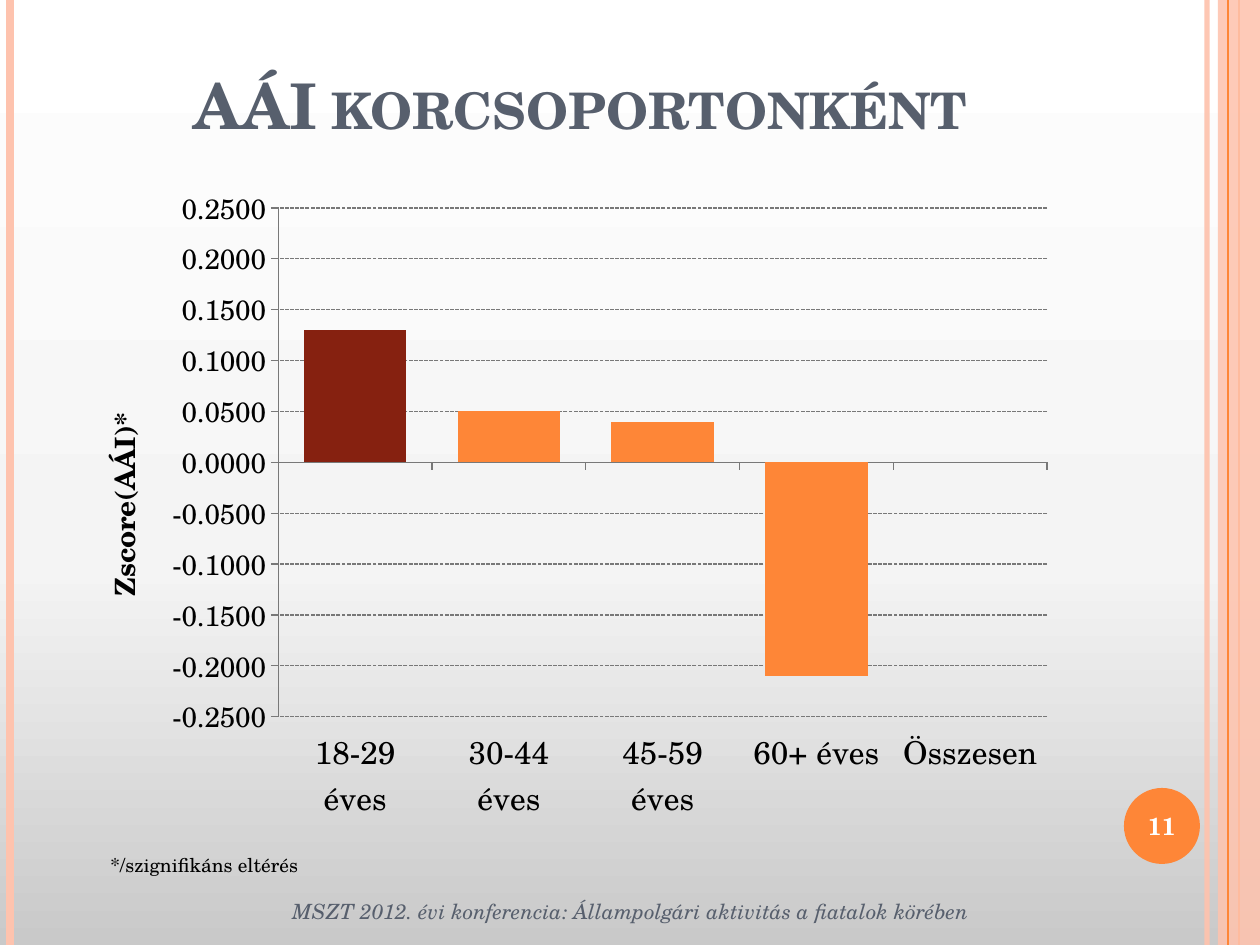
from dataclasses import dataclass
from typing import Optional

from lxml.etree import SubElement
from pptx import Presentation
from pptx.chart.data import CategoryChartData
from pptx.dml.color import RGBColor
from pptx.enum.chart import XL_CHART_TYPE, XL_TICK_LABEL_POSITION, XL_TICK_MARK
from pptx.enum.dml import MSO_LINE
from pptx.enum.shapes import MSO_CONNECTOR, MSO_SHAPE
from pptx.enum.text import MSO_ANCHOR, PP_ALIGN
from pptx.oxml import parse_xml
from pptx.oxml.ns import nsdecls, qn
from pptx.util import Emu, Pt

PX = 914400 / 126
W, H = 1260, 945
FONT = "TeX Gyre Schola"
ORANGE = RGBColor(0xFE, 0x86, 0x37)
PEACH = RGBColor(0xFE, 0xC3, 0xAE)
BROWN = RGBColor(0x86, 0x21, 0x10)
SLATE = RGBColor(0x57, 0x5F, 0x6D)
GREY = RGBColor(0x78, 0x78, 0x78)
WHITE = RGBColor(0xFF, 0xFF, 0xFF)
BLACK = RGBColor(0, 0, 0)
BG_STOPS = ((0, "C9C9C9"), (40, "F4F4F4"), (100, "FFFFFF"))


@dataclass
class Stripe:
    """A vertical line over the full slide height."""
    x: int
    width: float
    color: RGBColor
    alpha: Optional[int] = None


@dataclass
class Label:
    """A one-line text with its box in px and its font values."""
    text: str
    box: tuple
    font: dict
    align: PP_ALIGN = PP_ALIGN.CENTER
    anchor: MSO_ANCHOR = MSO_ANCHOR.MIDDLE
    wrap: bool = True


STRIPES = (
    Stripe(1207, 3, PEACH, 93),
    Stripe(10, 4.5, PEACH),
    Stripe(1239, 1.5, ORANGE),
)
EDGE = Stripe(1228, 0.75, ORANGE)
TITLE = Label("AÁI korcsoportonként", (108, 48, 945, 100),
              dict(size=Pt(36), bold=True, color=SLATE), anchor=MSO_ANCHOR.BOTTOM)
LABELS = (
    Label("11", (1120, 790, 84, 72), dict(size=Pt(14), bold=True, color=WHITE)),
    Label("MSZT 2012. évi konferencia: Állampolgári aktivitás a fiatalok körében",
          (168, 887, 925, 49), dict(size=Pt(12), italic=True, color=SLATE)),
    Label("*/szignifikáns eltérés", (98, 847, 215, 36), dict(size=Pt(11), color=BLACK),
          PP_ALIGN.LEFT, MSO_ANCHOR.TOP, False),
)
CHART_BOX = (74, 175, 992, 660)
AGES = {"18-29 éves": 0.13, "30-44 éves": 0.05, "45-59 éves": 0.04,
        "60+ éves": -0.21, "Összesen": None}


def emu(*px: int) -> list:
    """Turn px lengths into EMU."""
    return [Emu(round(v * PX)) for v in px]


def set_values(obj, values: dict) -> None:
    """Set attributes from a dict of format values."""
    for name, value in values.items():
        setattr(obj, name, value)


def set_font(font, values: dict) -> None:
    """Apply the slide's font with the given values."""
    font.color.rgb = values["color"]
    set_values(font, {"name": FONT, **{k: v for k, v in values.items() if k != "color"}})


def set_alpha(shape, percent: int) -> None:
    """Make the first solid colour of a shape transparent."""
    clr = next(shape._element.spPr.iter(qn("a:srgbClr")))
    SubElement(clr, qn("a:alpha")).set("val", str(percent * 1000))


def add_stripe(s, stripe: Stripe) -> None:
    """Draw one vertical stripe."""
    line = s.shapes.add_connector(MSO_CONNECTOR.STRAIGHT, *emu(stripe.x, 0, stripe.x, H))
    line.line.width = Pt(stripe.width)
    line.line.color.rgb = stripe.color
    if stripe.alpha:
        set_alpha(line, stripe.alpha)
    SubElement(line._element.spPr, qn("a:effectLst"))


def add_block(s, kind: MSO_SHAPE, box: tuple, color: RGBColor):
    """Draw a flat filled shape."""
    sp = s.shapes.add_shape(kind, *emu(*box))
    sp.shadow.inherit = False
    sp.fill.solid()
    sp.fill.fore_color.rgb = color
    sp.line.fill.background()
    return sp


def write_label(sp, label: Label) -> None:
    """Place a text shape and fill it with its label."""
    set_values(sp, dict(zip(("left", "top", "width", "height"), emu(*label.box))))
    tf = sp.text_frame
    set_values(tf, dict(word_wrap=label.wrap, vertical_anchor=label.anchor))
    p = tf.paragraphs[0]
    p.alignment = label.align
    r = p.add_run()
    r.text = label.text
    set_font(r.font, label.font)


def set_background(s) -> None:
    """Fill the background with a gradient from bottom to top."""
    fill = s.background.fill
    fill.gradient()
    fill.gradient_angle = 90
    stops = next(s._element.iter(qn("a:gsLst")))
    for old in list(stops):
        stops.remove(old)
    for pos, color in BG_STOPS:
        gs = SubElement(stops, qn("a:gs"), pos=str(pos * 1000))
        SubElement(gs, qn("a:srgbClr"), val=color)


def manual_layout(**values) -> object:
    """Build a manual chart layout."""
    items = "".join(f'<c:{k} val="{v}"/>' for k, v in values.items())
    return parse_xml(f'<c:layout {nsdecls("c")}><c:manualLayout>{items}'
                     '</c:manualLayout></c:layout>')


def add_age_chart(s) -> None:
    """Draw the column chart of scores by age group."""
    data = CategoryChartData(number_format="0.00")
    data.categories = list(AGES)
    data.add_series("Series 1", list(AGES.values()))
    chart = s.shapes.add_chart(XL_CHART_TYPE.COLUMN_CLUSTERED, *emu(*CHART_BOX), data).chart
    set_values(chart, dict(has_legend=False, has_title=False))
    set_font(chart.font, dict(size=Pt(10), color=BLACK))

    plot = chart.plots[0]
    set_values(plot, dict(gap_width=50, vary_by_categories=False))
    series = plot.series[0]
    series.invert_if_negative = False
    for fmt, color in ((series.format, ORANGE), (series.points[0].format, BROWN)):
        fmt.fill.solid()
        fmt.fill.fore_color.rgb = color

    cat, val = chart.category_axis, chart.value_axis
    for axis, size in ((cat, 18), (val, 16)):
        set_values(axis, dict(major_tick_mark=XL_TICK_MARK.OUTSIDE,
                              minor_tick_mark=XL_TICK_MARK.NONE))
        axis.format.line.color.rgb = GREY
        set_font(axis.tick_labels.font, dict(size=Pt(size), color=BLACK))
    cat.tick_label_position = XL_TICK_LABEL_POSITION.LOW
    set_values(val, dict(minimum_scale=-0.25, maximum_scale=0.25, major_unit=0.05))
    set_values(val.tick_labels, dict(number_format="#,##0.0000", number_format_is_linked=False))
    grid = val.major_gridlines.format.line
    grid.color.rgb = GREY
    set_values(grid, dict(width=Pt(0.75), dash_style=MSO_LINE.SQUARE_DOT))

    r = val.axis_title.text_frame.paragraphs[0].add_run()
    r.text = "Zscore(AÁI)*"
    set_font(r.font, dict(size=Pt(16), bold=True, color=BLACK))
    area = chart._chartSpace.chart.plotArea
    title = val.axis_title._element
    for parent, layout in (
        (area, manual_layout(layoutTarget="inner", xMode="edge", yMode="edge",
                             x=0.206, y=0.05, w=0.775, h=0.771)),
        (title, manual_layout(xMode="edge", yMode="edge", x=0.02, y=0.352)),
    ):
        for old in parent.findall(qn("c:layout")):
            parent.remove(old)
        parent.insert(1 if parent is title else 0, layout)


def main() -> None:
    """Build and save the slide."""
    prs = Presentation()
    prs.slide_width, prs.slide_height = emu(W, H)
    s = prs.slides.add_slide(prs.slide_layouts[5])
    set_background(s)
    for stripe in STRIPES:
        add_stripe(s, stripe)
    set_alpha(add_block(s, MSO_SHAPE.RECTANGLE, (1218, 0, 42, H), PEACH), 87)
    add_stripe(s, EDGE)
    add_block(s, MSO_SHAPE.OVAL, (1124, 788, 76, 76), ORANGE)
    title = s.shapes.title
    write_label(title, TITLE)
    title.text_frame.paragraphs[0].runs[0].font._element.set("cap", "small")
    for label in LABELS:
        write_label(s.shapes.add_textbox(*emu(*label.box)), label)
    add_age_chart(s)
    prs.save("out.pptx")


if __name__ == "__main__":
    main()
